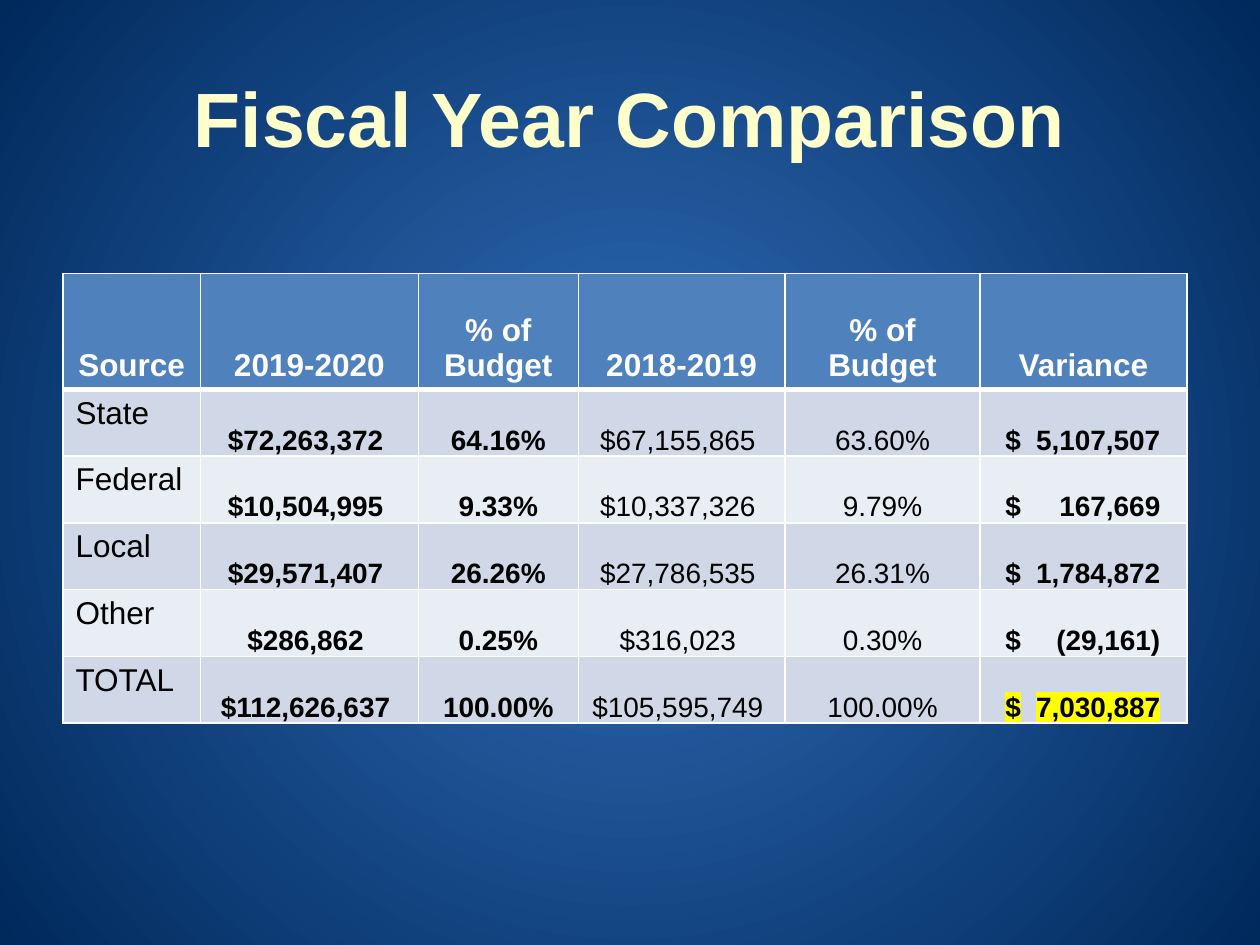
from dataclasses import astuple, dataclass

from lxml.etree import SubElement
from pptx import Presentation
from pptx.dml.color import RGBColor
from pptx.enum.text import MSO_ANCHOR as Anchor, PP_ALIGN as Align
from pptx.oxml.ns import qn
from pptx.util import Inches, Pt

WHITE, BLACK, YELLOW = "FFFFFF", "000000", "FFFF00"
HEADER_FILL, BAND_FILLS = "4F81BD", ("D0D8E8", "E9EDF4")
HEADER_HEIGHT, ROW_HEIGHT = 0.92, 0.53
COLUMN_WIDTHS = (1.09, 1.73, 1.27, 1.64, 1.55, 1.64)
HEADINGS = ("Source", "2019-2020", "% of Budget", "2018-2019", "% of Budget", "Variance")


@dataclass
class FundingSource:
    name: str
    current: str
    current_share: str
    previous: str
    previous_share: str
    variance: str


SOURCES = (
    FundingSource("State", "$72,263,372", "64.16%", "$67,155,865", "63.60%", "$\t5,107,507"),
    FundingSource("Federal", "$10,504,995", "9.33%", "$10,337,326", "9.79%", "$\t167,669"),
    FundingSource("Local", "$29,571,407", "26.26%", "$27,786,535", "26.31%", "$\t1,784,872"),
    FundingSource("Other", "$286,862", "0.25%", "$316,023", "0.30%", "$\t(29,161)"),
    FundingSource("TOTAL", "$112,626,637", "100.00%", "$105,595,749", "100.00%", "$\t7,030,887"),
)


@dataclass
class ColumnFormat:
    size: int = 16
    bold: bool = True
    align: Align = Align.CENTER
    anchor: Anchor = Anchor.BOTTOM
    margins: tuple = (0.01, 0.01, 0.01, 0)  # left, top, right, bottom
    tab: float | None = None


DEFAULT_MARGINS = (0.1, 0.05, 0.1, 0.05)
AMOUNT_MARGINS = (0.01, 0.01, 0.07, 0)
HEADER_FORMAT = ColumnFormat(size=18, margins=DEFAULT_MARGINS)
COLUMN_FORMATS = (
    ColumnFormat(18, False, Align.LEFT, Anchor.TOP, DEFAULT_MARGINS),
    ColumnFormat(margins=AMOUNT_MARGINS),
    ColumnFormat(),
    ColumnFormat(bold=False, margins=AMOUNT_MARGINS),
    ColumnFormat(bold=False),
    ColumnFormat(align=Align.LEFT, margins=(0.2, 0.01, 0.01, 0), tab=1.23),
)


def rgb(color: str) -> RGBColor:
    return RGBColor.from_string(color)


def write_text(frame, text: str, *, size: int, color: str, bold: bool, align: Align,
               tab: float | None = None, highlight: str | None = None) -> None:
    """Fill a text frame; tab is a right-aligned stop in inches."""
    paragraph = frame.paragraphs[0]
    paragraph.alignment = align
    run = paragraph.add_run()
    run.text = text
    font = run.font
    font.name, font.size, font.bold = "Arial", Pt(size), bold
    font.color.rgb = rgb(color)
    if tab is not None:
        stops = SubElement(paragraph._p.get_or_add_pPr(), qn("a:tabLst"))
        SubElement(stops, qn("a:tab"), pos=str(Inches(tab)), algn="r")
    if highlight:
        properties = run._r.get_or_add_rPr()
        mark = SubElement(properties, qn("a:highlight"))
        SubElement(mark, qn("a:srgbClr"), val=highlight)
        properties.find(qn("a:solidFill")).addnext(mark)


def set_borders(cell, top: float, bottom: float) -> None:
    """Draw white borders; top and bottom are widths in points."""
    properties = cell._tc.get_or_add_tcPr()
    for index, (side, width) in enumerate((("L", 1), ("R", 1), ("T", top), ("B", bottom))):
        line = SubElement(properties, qn(f"a:ln{side}"), w=str(Pt(width)))
        fill = SubElement(line, qn("a:solidFill"))
        SubElement(fill, qn("a:srgbClr"), val=WHITE)
        properties.insert(index, line)


def fill_cell(cell, text: str, style: ColumnFormat, *, fill: str, color: str,
              top: float = 1, bottom: float = 1, highlight: str | None = None) -> None:
    cell.fill.solid()
    cell.fill.fore_color.rgb = rgb(fill)
    cell.vertical_anchor = style.anchor
    (cell.margin_left, cell.margin_top,
     cell.margin_right, cell.margin_bottom) = map(Inches, style.margins)
    set_borders(cell, top, bottom)
    write_text(cell.text_frame, text, size=style.size, color=color, bold=style.bold,
               align=style.align, tab=style.tab, highlight=highlight)


def set_radial_background(slide) -> None:
    fill = slide.background.fill
    fill.gradient()
    for stop, (position, color) in zip(fill.gradient_stops, ((0.1, "2C67B0"), (1, "00295C"))):
        stop.position = position
        stop.color.rgb = rgb(color)
    gradient = next(slide._element.iter(qn("a:gradFill")))
    linear = gradient.find(qn("a:lin"))
    radial = SubElement(gradient, qn("a:path"), path="circle")
    SubElement(radial, qn("a:fillToRect"), l="50000", t="50000", r="50000", b="50000")
    gradient.replace(linear, radial)


def add_title(slide, text: str) -> None:
    title = slide.shapes.title
    title.left, title.top, title.width, title.height = map(Inches, (0.5, 0.3, 9, 1.25))
    title.text_frame.vertical_anchor = Anchor.MIDDLE
    write_text(title.text_frame, text, size=44, color="FFFFCC", bold=True, align=Align.CENTER)


def add_budget_table(slide) -> None:
    height = HEADER_HEIGHT + ROW_HEIGHT * len(SOURCES)
    table = slide.shapes.add_table(
        len(SOURCES) + 1, len(HEADINGS), Inches(0.5), Inches(2.17),
        Inches(sum(COLUMN_WIDTHS)), Inches(height)).table
    table.horz_banding = False
    for column, width in zip(table.columns, COLUMN_WIDTHS):
        column.width = Inches(width)
    for index, row in enumerate(table.rows):
        row.height = Inches(ROW_HEIGHT if index else HEADER_HEIGHT)

    for column, heading in enumerate(HEADINGS):
        fill_cell(table.cell(0, column), heading, HEADER_FORMAT,
                  fill=HEADER_FILL, color=WHITE, bottom=3)
    for row, source in enumerate(SOURCES, start=1):
        for column, (text, style) in enumerate(zip(astuple(source), COLUMN_FORMATS)):
            is_total_variance = source.name == "TOTAL" and HEADINGS[column] == "Variance"
            fill_cell(table.cell(row, column), text, style,
                      fill=BAND_FILLS[(row - 1) % 2], color=BLACK,
                      top=3 if row == 1 else 1,
                      highlight=YELLOW if is_total_variance else None)


def main() -> None:
    presentation = Presentation()
    presentation.slide_width, presentation.slide_height = Inches(10), Inches(7.5)
    slide = presentation.slides.add_slide(presentation.slide_layouts.get_by_name("Title Only"))
    set_radial_background(slide)
    add_title(slide, "Fiscal Year Comparison")
    add_budget_table(slide)
    presentation.save("out.pptx")


if __name__ == "__main__":
    main()
